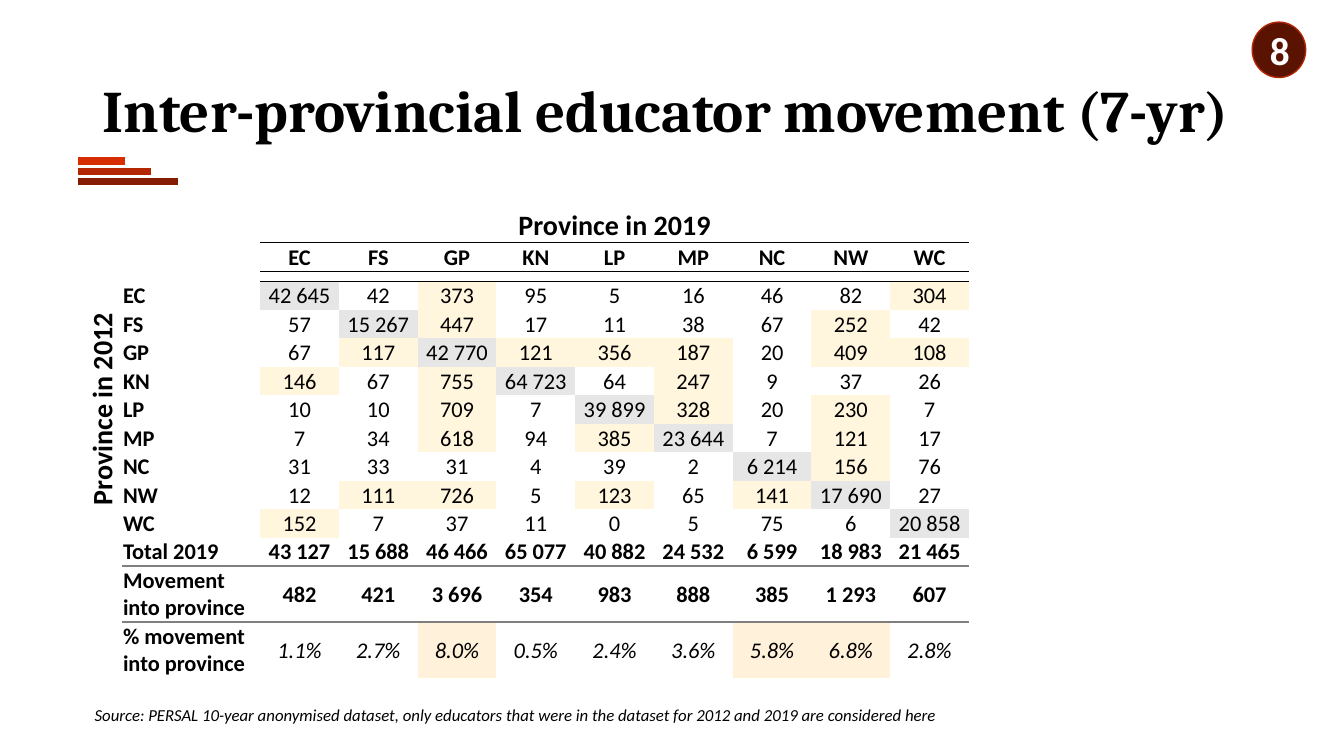
from dataclasses import dataclass

from lxml import etree
from pptx import Presentation
from pptx.dml.color import RGBColor
from pptx.enum.shapes import MSO_CONNECTOR, MSO_SHAPE
from pptx.enum.text import MSO_ANCHOR, PP_ALIGN
from pptx.oxml.ns import qn
from pptx.util import Emu, Inches, Pt

LINE, OVAL = MSO_CONNECTOR.STRAIGHT, MSO_SHAPE.OVAL
LEFT, MID = PP_ALIGN.LEFT, PP_ALIGN.CENTER
CENTRE, BASE = MSO_ANCHOR.MIDDLE, MSO_ANCHOR.BOTTOM
WIDE, HIGH = Inches(13.33), Inches(7.5)
PLAIN = "{2D5ABB26-0587-4C30-8999-92F81FD0307C}"
BLACK, GREY, GOLD, PEACH = "000000", "E7E6E6", "FFF6DD", "FFF1DA"
RULE, SUM_RULE = (BLACK, 0.75), ("7F7F7F", 1)

# Educators by province: rows are 2012, columns are 2019
NAMES = "EC FS GP KN LP MP NC NW WC".split()
MOVES = [
    [42645, 42, 373, 95, 5, 16, 46, 82, 304],
    [57, 15267, 447, 17, 11, 38, 67, 252, 42],
    [67, 117, 42770, 121, 356, 187, 20, 409, 108],
    [146, 67, 755, 64723, 64, 247, 9, 37, 26],
    [10, 10, 709, 7, 39899, 328, 20, 230, 7],
    [7, 34, 618, 94, 385, 23644, 7, 121, 17],
    [31, 33, 31, 4, 39, 2, 6214, 156, 76],
    [12, 111, 726, 5, 123, 65, 141, 17690, 27],
    [152, 7, 37, 11, 0, 5, 75, 6, 20858],
]
COUNT = len(NAMES)
HEAD, GAP, BODY = 1, 2, 3
TOTAL = BODY + COUNT
MOVED, RATE = TOTAL + 1, TOTAL + 2

# Column and row sizes in percent of the slide
COLS = [2.78, 10.28] + [5.86] * COUNT
ROWS = [4.53, 3.87, 1.27] + [3.77] * (COUNT + 1) + [7.4] * 2


@dataclass
class Box:
    """Place and size in percent of the slide."""
    x: float
    y: float
    w: float
    h: float

    def emus(self) -> tuple:
        return across(self.x), down(self.y), across(self.w), down(self.h)


@dataclass
class Bar:
    end: float
    tint: str


BARS = [Bar(13.28, "851C00"), Bar(11.25, "B22600"), Bar(9.3, "D62E00")]


def across(share: float) -> Emu:
    return Emu(round(WIDE * share / 100))


def down(share: float) -> Emu:
    return Emu(round(HIGH * share / 100))


def hue(code: str) -> RGBColor:
    return RGBColor.from_string(code)


def write(frame, text: str, size: float = 16, font: str = "Calibri", tint: str = BLACK,
          bold: bool = False, slant: bool = False, align=LEFT) -> None:
    """Add one run to the first paragraph."""
    para = frame.paragraphs[0]
    para.alignment = align
    run = para.add_run()
    run.text = text
    run.font.size, run.font.name = Pt(size), font
    run.font.bold, run.font.italic = bold, slant
    run.font.color.rgb = hue(tint)


def text_box(slide, box: Box):
    frame = slide.shapes.add_textbox(*box.emus()).text_frame
    frame.word_wrap = True
    frame.vertical_anchor = CENTRE
    return frame


def edge(cell, side: str, rule: tuple) -> None:
    tint, width = rule
    line = etree.SubElement(cell._tc.get_or_add_tcPr(), qn("a:ln" + side), w=str(Pt(width)))
    fill = etree.SubElement(line, qn("a:solidFill"))
    etree.SubElement(fill, qn("a:srgbClr"), val=tint)


def put(cell, text: str, fill: str = "", anchor=CENTRE, **form) -> None:
    cell.vertical_anchor = anchor
    if fill:
        cell.fill.solid()
        cell.fill.fore_color.rgb = hue(fill)
    write(cell.text_frame, text, **form)


def spaced(value: int) -> str:
    return f"{value:,}".replace(",", " ")


def draw_bars(slide) -> None:
    for i, bar in enumerate(BARS):
        y = down(24 - 1.33 * i)
        line = slide.shapes.add_connector(LINE, across(5.78), y, across(bar.end), y)
        line.line.color.rgb = hue(bar.tint)
        line.line.width = Pt(5.5)
        etree.SubElement(line._element.spPr, qn("a:effectLst"))


def blank_table(slide):
    box = Box(6.3, 27.47, sum(COLS), sum(ROWS))
    table = slide.shapes.add_table(len(ROWS), len(COLS), *box.emus()).table
    table.first_row = table.horz_banding = False
    table._tbl.tblPr.find(qn("a:tableStyleId")).text = PLAIN
    for col, share in zip(table.columns, COLS):
        col.width = across(share)
    for row, share in zip(table.rows, ROWS):
        row.height = down(share)
    for cell in table.iter_cells():
        cell.margin_left = cell.margin_right = cell.margin_top = Inches(0.01)
        cell.margin_bottom = 0
    return table


def draw_table(slide) -> None:
    table = blank_table(slide)

    # Rules come before fills
    for col in range(1, len(COLS)):
        edge(table.cell(TOTAL, col), "B", SUM_RULE)
        edge(table.cell(MOVED, col), "T", SUM_RULE)
        if col > 1:
            edge(table.cell(0, col), "B", RULE)
            edge(table.cell(HEAD, col), "T", RULE)
            edge(table.cell(HEAD, col), "B", RULE)
            edge(table.cell(GAP, col), "T", RULE)

    # Axis titles
    top, side = table.cell(0, 2), table.cell(BODY, 0)
    top.merge(table.cell(0, COUNT + 1))
    side.merge(table.cell(TOTAL - 1, 0))
    put(top, "Province in 2019", anchor=BASE, size=20, bold=True, align=MID)
    put(side, "Province in 2012", size=20, bold=True, align=MID)
    side._tc.get_or_add_tcPr().set("vert", "vert270")

    # Row labels
    labels = NAMES + ["Total 2019", "Movement into province", "% movement into province"]
    for row, label in enumerate(labels, BODY):
        put(table.cell(row, 1), label, bold=True)

    # Counts and sums for each province
    for i, name in enumerate(NAMES):
        col = i + 2
        put(table.cell(HEAD, col), name, bold=True, align=MID)
        counts = [line[i] for line in MOVES]
        for j, count in enumerate(counts):
            fill = GREY if i == j else GOLD if count > 100 else ""
            put(table.cell(BODY + j, col), spaced(count), fill, align=MID)
        total = sum(counts)
        moved = total - counts[i]
        rate = moved / total
        put(table.cell(TOTAL, col), spaced(total), bold=True, align=MID)
        put(table.cell(MOVED, col), spaced(moved), bold=True, align=MID)
        put(table.cell(RATE, col), f"{rate:.1%}", PEACH if rate > 0.05 else "",
            slant=True, align=MID)

    # Empty cells get small type so rows keep their height
    for cell in table.iter_cells():
        if not cell.text_frame.text:
            etree.SubElement(cell.text_frame.paragraphs[0]._p, qn("a:endParaRPr"), sz="400")


def draw_badge(slide) -> None:
    badge = slide.shapes.add_shape(OVAL, *Box(93.17, 2.93, 3.98, 7.33).emus())
    badge.shadow.inherit = False
    badge.fill.solid()
    badge.fill.fore_color.rgb = hue("591300")
    badge.line.color.rgb = hue("B22600")
    badge.line.width = Pt(1)
    badge.text_frame.vertical_anchor = CENTRE
    write(badge.text_frame, "8", size=28, tint="FFFFFF", bold=True, align=MID)


def main() -> None:
    deck = Presentation()
    deck.slide_width, deck.slide_height = WIDE, HIGH
    slide = deck.slides.add_slide(deck.slide_layouts[6])
    draw_bars(slide)

    # Title
    title = text_box(slide, Box(6.9, 5.33, 89.35, 19.33))
    title.paragraphs[0].line_spacing = 0.9
    for text, size in [("Inter-provincial educator movement ", 42), ("(", 40), ("7-yr", 42), (")", 40)]:
        write(title, text, size=size, font="Cambria", bold=True)

    # Source note
    note = text_box(slide, Box(6.3, 92.27, 75.99, 4.67))
    write(note, "Source: PERSAL 10-year anonymised dataset, only educators that were in the dataset "
          "for 2012 and 2019 are considered here", size=12, slant=True)

    draw_table(slide)
    draw_badge(slide)
    deck.save("out.pptx")


if __name__ == "__main__":
    main()
